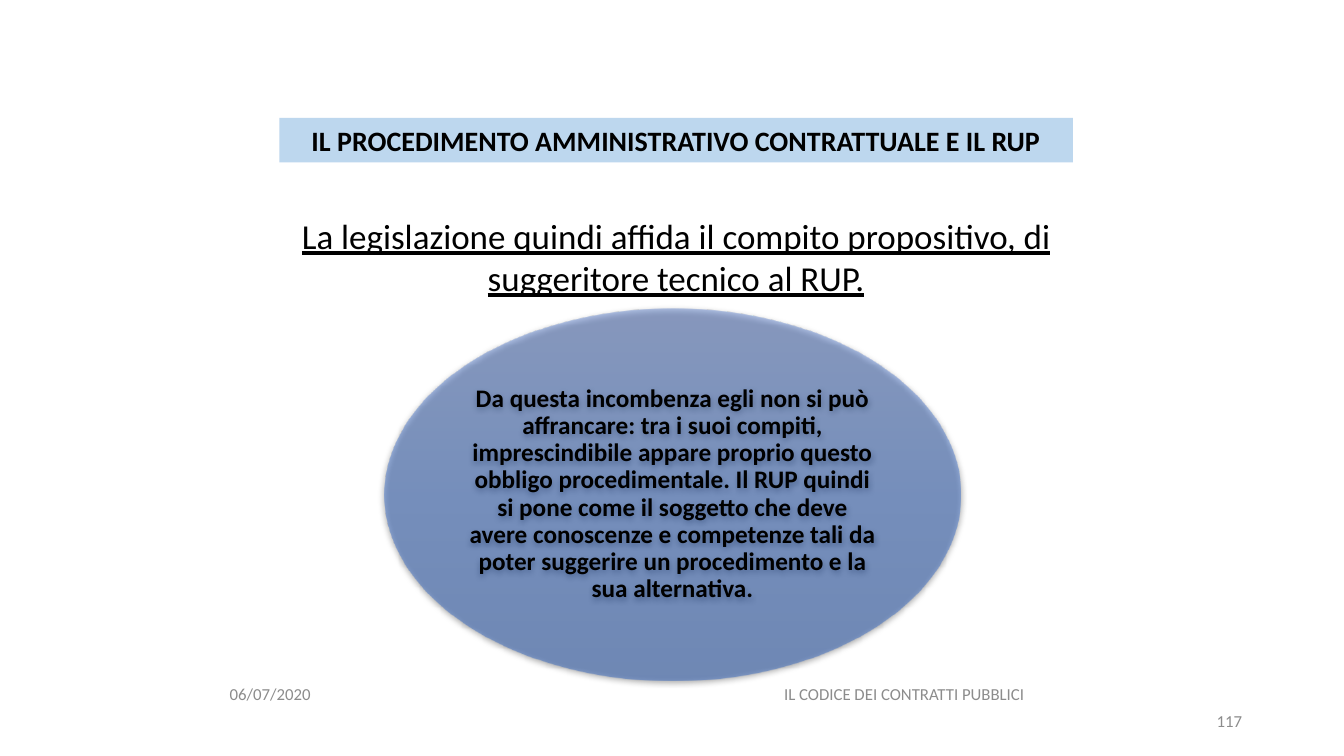
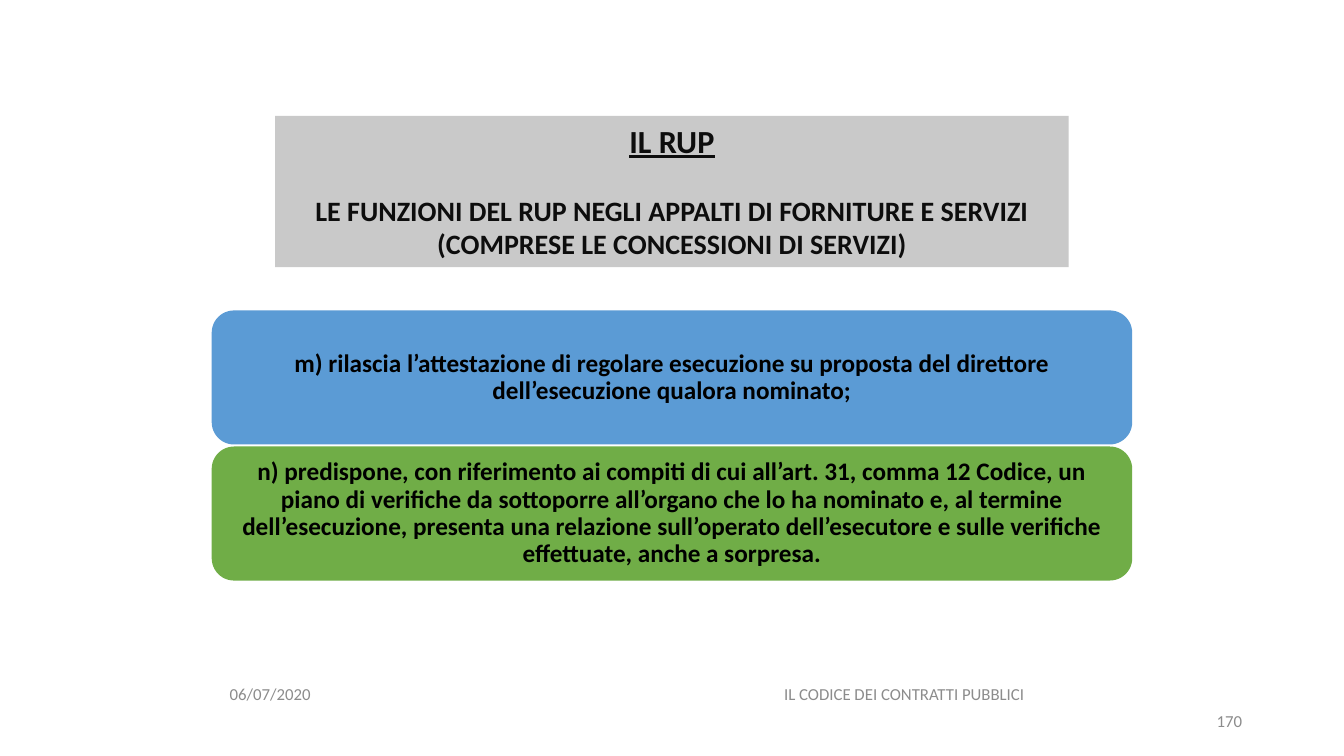
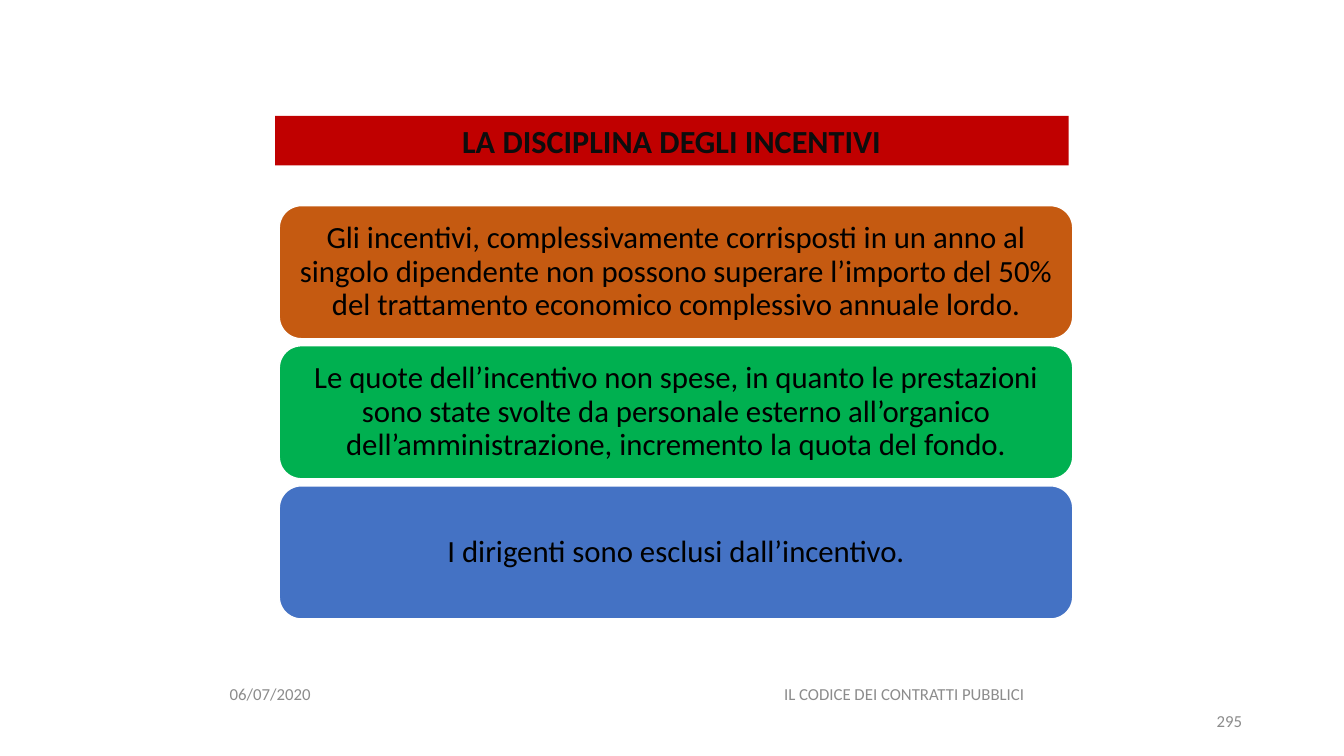
from lxml import etree
from pptx import Presentation
from pptx import util as u
from pptx.dml.color import RGBColor
from pptx.enum import shapes, text
from pptx.oxml.ns import qn

# Shared look
FONT = "Calibri"
BLACK = RGBColor(0x00, 0x00, 0x00)
INK = RGBColor(0x0D, 0x0D, 0x0D)
GREY = RGBColor(0x8C, 0x8C, 0x8C)
WHITE = RGBColor(0xFF, 0xFF, 0xFF)
PALE = RGBColor(0xBD, 0xD7, 0xEE)
SILVER = RGBColor(0xC9, 0xC9, 0xC9)
RED = RGBColor(0xC0, 0x00, 0x00)
SKY = RGBColor(0x5B, 0x9B, 0xD5)
LEAF = RGBColor(0x70, 0xAD, 0x47)
RUST = RGBColor(0xC5, 0x5A, 0x11)
GREEN = RGBColor(0x00, 0xB0, 0x50)
BLUE = RGBColor(0x44, 0x72, 0xC4)
STOPS = [(0, "6183CB"), (50, "3E70CA"), (100, "3062BB")]

LEFT, WIDE = 2.77, 7.87  # main column
DATE = "06/07/2020"
TOPIC = "IL CODICE DEI CONTRATTI PUBBLICI"
MID, TOP = text.MSO_ANCHOR.MIDDLE, text.MSO_ANCHOR.TOP
START, MIDDLE, END = (text.PP_ALIGN.LEFT, text.PP_ALIGN.CENTER,
                      text.PP_ALIGN.RIGHT)


def put(item, *box):
    """Set left, top, width and height in inches."""
    for name, size in zip(("left", "top", "width", "height"), box):
        setattr(item, name, u.Inches(size))


def write(item, lines, anchor=MID, pad=None, align=MIDDLE, space=1.0, after=0):
    """Fill an item with (words, font format) paragraphs."""
    frame = item.text_frame
    frame.word_wrap = True
    frame.auto_size = text.MSO_AUTO_SIZE.NONE
    frame.vertical_anchor = anchor
    if pad is not None:
        for side in ("left", "top", "right", "bottom"):
            setattr(frame, "margin_" + side, u.Inches(pad))
    for n, (words, form) in enumerate(lines):
        para = frame.add_paragraph() if n else frame.paragraphs[0]
        para.alignment = align
        para.line_spacing = space
        para.space_after = u.Pt(after if n < len(lines) - 1 else 0)
        run = para.add_run()
        run.text = words
        look = {"name": FONT, "bold": False, "color": BLACK} | form
        run.font.color.rgb = look.pop("color")
        look["size"] = u.Pt(look["size"])
        for key, value in look.items():
            setattr(run.font, key, value)


def label(slide, box, words, align=MIDDLE, anchor=MID, **form):
    item = slide.shapes.add_textbox(0, 0, 0, 0)
    put(item, *box)
    write(item, [(words, form)], anchor, align=align)


def page(deck, number, box, fill, lines, after=0):
    """Add a slide with its title band and footer."""
    slide = deck.slides.add_slide(deck.slide_layouts[5])
    band = slide.shapes.title
    put(band, *box)
    band.fill.solid()
    band.fill.fore_color.rgb = fill
    write(band, lines, TOP, after=after)
    feet = [((2.18, 6.68, 2.5, 0.4), DATE, START),
            ((7.14, 6.68, 3.66, 0.4), TOPIC, MIDDLE),
            ((9.42, 6.95, 3, 0.4), str(number), END)]
    for spot, words, align in feet:
        label(slide, spot, words, align, size=12, color=GREY)
    return slide


def stack(slide, box, gap, pad, cards, edge=None, **form):
    """Pile up equal rounded cards; box is that of the first."""
    left, top, width, height = box
    for n, (fill, words) in enumerate(cards):
        card = slide.shapes.add_shape(
            shapes.MSO_SHAPE.ROUNDED_RECTANGLE, 0, 0, 0, 0)
        put(card, left, top + n * (height + gap), width, height)
        card.shadow.inherit = False
        card.fill.solid()
        card.fill.fore_color.rgb = fill
        if edge is None:
            card.line.fill.background()
        else:
            card.line.color.rgb = edge
            card.line.width = u.Pt(1)
        write(card, [(words, form)], pad=pad, space=0.9)


def tint(parent, code, alpha):
    color = etree.SubElement(parent, qn("a:srgbClr"), val=code)
    etree.SubElement(color, qn("a:alpha"), val=str(alpha * 1000))


def oval(slide, box, words, **form):
    """Draw a translucent ellipse with a gradient and a soft shadow."""
    item = slide.shapes.add_shape(shapes.MSO_SHAPE.OVAL, 0, 0, 0, 0)
    put(item, *box)
    item.line.fill.background()
    item.shadow.inherit = False
    item.fill.gradient()
    item.fill.gradient_angle = 270
    props = item._element.spPr
    stops = props.find(".//" + qn("a:gsLst"))
    for old in list(stops):
        stops.remove(old)
    for share, code in STOPS:
        stop = etree.SubElement(stops, qn("a:gs"), pos=str(share * 1000))
        tint(stop, code, 50)
    shade = etree.SubElement(
        props.find(qn("a:effectLst")), qn("a:outerShdw"),
        blurRad=str(u.Pt(4.5)), dist=str(u.Pt(1.5)), dir="5400000",
        rotWithShape="0")
    tint(shade, "000000", 63)
    write(item, [(words, form)], pad=0, space=0.9)


def main():
    deck = Presentation()
    deck.slide_width, deck.slide_height = u.Inches(13.33), u.Inches(7.5)

    # The procedure and its officer
    slide = page(deck, 117, (LEFT, 1.17, WIDE, 0.44), PALE, [
        ("IL PROCEDIMENTO AMMINISTRATIVO CONTRATTUALE E IL RUP",
         {"size": 20, "bold": True})])
    label(slide, (LEFT, 2.08, WIDE, 0.94),
          "La legislazione quindi affida il compito propositivo, di "
          "suggeritore tecnico al RUP.",
          anchor=TOP, size=25, underline=True)
    oval(slide, (3.81, 3.06, 5.72, 3.69),
         "Da questa incombenza egli non si può affrancare: tra i suoi "
         "compiti, imprescindibile appare proprio questo obbligo "
         "procedimentale. Il RUP quindi si pone come il soggetto che deve "
         "avere conoscenze e competenze tali da poter suggerire un "
         "procedimento e la sua alternativa.", size=18, bold=True)

    # The officer's tasks
    head = {"size": 23, "bold": True, "color": INK}
    slide = page(deck, 170, (2.73, 1.15, WIDE, 1.5), SILVER, [
        ("IL RUP", head | {"underline": True}),
        ("LE FUNZIONI DEL RUP NEGLI APPALTI DI FORNITURE E SERVIZI "
         "(COMPRESE LE CONCESSIONI DI SERVIZI)", head | {"size": 20})],
        after=24)
    stack(slide, (2.1, 3.08, 9.13, 1.33), 0.02, 0.07, [
        (SKY, "m) rilascia l’attestazione di regolare esecuzione su proposta "
              "del direttore dell’esecuzione qualora nominato;"),
        (LEAF, "n) predispone, con riferimento ai compiti di cui all’art. 31, "
               "comma 12 Codice, un piano di verifiche da sottoporre "
               "all’organo che lo ha nominato e, al termine "
               "dell’esecuzione, presenta una relazione sull’operato "
               "dell’esecutore e sulle verifiche effettuate, anche a "
               "sorpresa.")], size=18, bold=True)

    # Incentives
    slide = page(deck, 295, (2.73, 1.15, WIDE, 0.49), RED, [
        ("LA DISCIPLINA DEGLI INCENTIVI", head)])
    stack(slide, (LEFT, 2.04, WIDE, 1.32), 0.07, 0.09, [
        (RUST, "Gli incentivi, complessivamente corrisposti in un anno al "
               "singolo dipendente non possono superare l’importo del 50% "
               "del trattamento economico complessivo annuale lordo."),
        (GREEN, "Le quote dell’incentivo non spese, in quanto le prestazioni "
                "sono state svolte da personale esterno all’organico "
                "dell’amministrazione, incremento la quota del fondo."),
        (BLUE, "I dirigenti sono esclusi dall’incentivo.")],
        edge=WHITE, size=22)

    deck.save("out.pptx")


if __name__ == "__main__":
    main()
